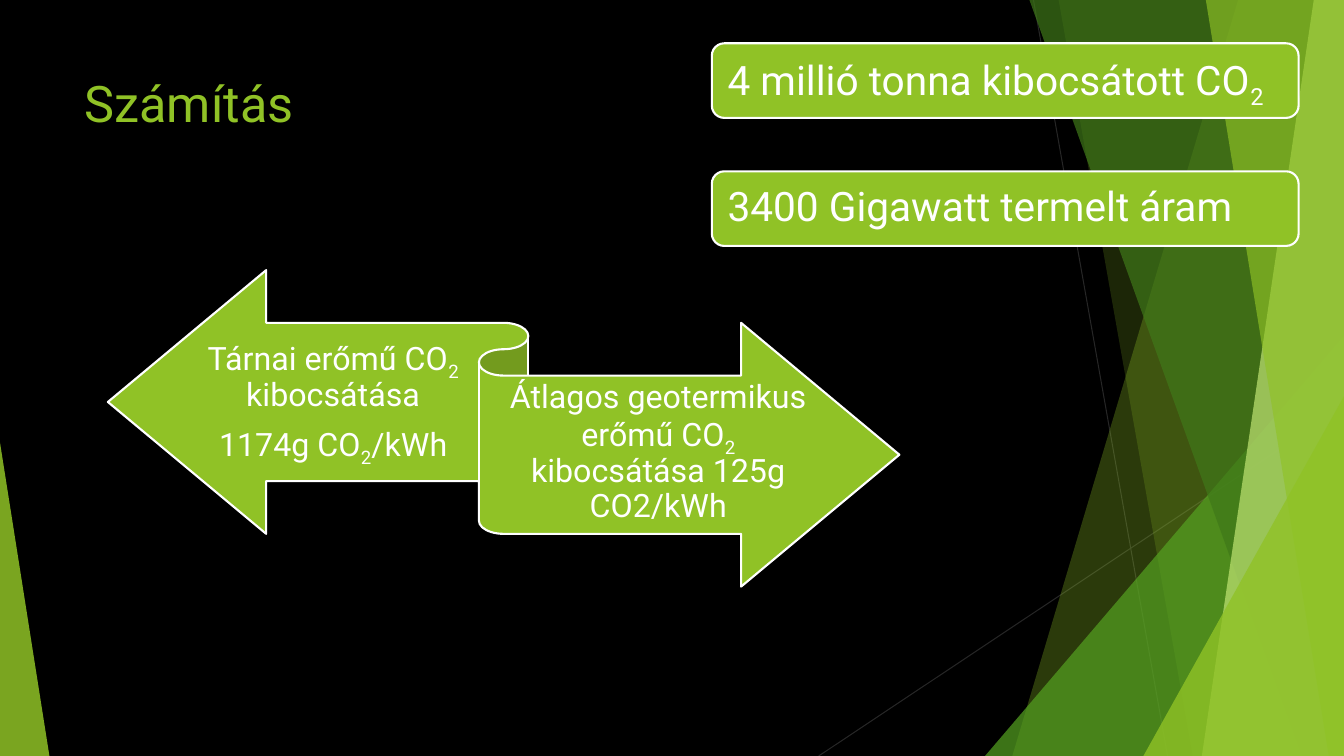
"""Build the calculation slide comparing power plant emissions."""
from lxml import etree
from pptx import Presentation
from pptx import util as u
from pptx.dml import color
from pptx.enum import shapes, text
from pptx.oxml import ns

PX = 9144
W, H = 1333, 750
C = {"bg": "000000", "green": "90C226", "mid": "54A021", "dark": "3F7819",
     "pale": "C0E474", "white": "FFFFFF", "thin": "262626"}
FONT = "Roboto"


def rgb(name):
    return color.RGBColor.from_string(C[name])


def box(*lengths):
    return [n * PX for n in lengths]


def set_all(obj, values):
    for name, value in values.items():
        setattr(obj, name, value)


def paint(sp, fill, alpha=100, line=None):
    sp.shadow.inherit = False
    sp.fill.solid()
    sp.fill.fore_color.rgb = rgb(fill)
    if alpha < 100:
        clr = sp.fill._xPr.find(".//" + ns.qn("a:srgbClr"))
        etree.SubElement(clr, ns.qn("a:alpha")).set("val", str(alpha * 1000))
    if line:
        sp.line.color.rgb = rgb(line)
        sp.line.width = u.Pt(1.5)
    else:
        sp.line.fill.background()


def add_line(s, x1, y1, x2, y2):
    cn = s.shapes.add_connector(shapes.MSO_CONNECTOR.STRAIGHT, *box(x1, y1, x2, y2))
    cn.line.color.rgb = rgb("thin")
    cn.line.width = u.Pt(0.75)
    etree.SubElement(cn._element.spPr, ns.qn("a:effectLst"))


def add_band(s, top_x, bottom_x, fill, alpha):
    fb = s.shapes.build_freeform(top_x, 0, scale=PX)
    fb.add_line_segments([(W, 0), (W, H), (bottom_x, H)], close=True)
    paint(fb.convert_to_shape(), fill, alpha)


def add_triangle(s, x, y, w, h, adj, fill, alpha):
    sp = s.shapes.add_shape(shapes.MSO_SHAPE.ISOSCELES_TRIANGLE, *box(x, y, w, h))
    sp.adjustments[0] = adj
    paint(sp, fill, alpha)


def write(sp, paragraphs, size, align, margins):
    """Fill a shape with paragraphs whose every second run is a subscript."""
    tf = sp.text_frame
    left, top, right, bottom = box(*margins)
    set_all(tf, {"word_wrap": True, "vertical_anchor": text.MSO_ANCHOR.MIDDLE,
                 "margin_left": left, "margin_top": top,
                 "margin_right": right, "margin_bottom": bottom})
    for i, runs in enumerate(paragraphs):
        p = tf.add_paragraph() if i else tf.paragraphs[0]
        set_all(p, {"alignment": align, "line_spacing": 0.9,
                    "space_after": u.Pt(round(size * 0.35))})
        for j, words in enumerate(runs):
            r = p.add_run()
            r.text = words
            set_all(r.font, {"name": FONT, "size": u.Pt(size)})
            r.font.color.rgb = rgb("white")
            if j % 2:
                r.font._element.set("baseline", "-25000")


def add_title(s, words):
    sp = s.shapes.title
    set_all(sp, dict(zip(("left", "top", "width", "height"), box(74, 67, 940, 144))))
    tf = sp.text_frame
    tf.text = words
    tf.vertical_anchor = text.MSO_ANCHOR.TOP
    p = tf.paragraphs[0]
    p.alignment = text.PP_ALIGN.LEFT
    set_all(p.runs[0].font, {"name": FONT, "size": u.Pt(36)})
    p.runs[0].font.color.rgb = rgb("green")


def add_fact(s, y, runs):
    sp = s.shapes.add_shape(shapes.MSO_SHAPE.ROUNDED_RECTANGLE, *box(706, y, 582, 74))
    paint(sp, "green", line="white")
    write(sp, [runs], 29, text.PP_ALIGN.LEFT, (12, 12, 12, 12))


def add_arrow_text(s, x, y, w, paragraphs):
    sp = s.shapes.add_textbox(*box(x, y, w, 154))
    write(sp, paragraphs, 23, text.PP_ALIGN.CENTER, (0, 9, 0, 10))


def add_decoration(s):
    add_line(s, 1025, 0, 1158, H)
    add_line(s, W, 403, 812, H)
    add_band(s, 1228, 1004, "green", 30)
    add_band(s, 1050, 1183, "green", 20)
    add_triangle(s, 977, 333, 356, 417, 1, "mid", 72)
    add_band(s, 1021, 1291, "dark", 70)
    add_band(s, 1303, 1192, "pale", 70)
    add_band(s, 1196, 1318, "green", 65)
    add_triangle(s, 1134, 393, 199, 357, 1, "green", 80)
    add_triangle(s, 0, 439, 49, 311, 0, "green", 85)


def main():
    prs = Presentation()
    prs.slide_width, prs.slide_height = box(W, H)
    s = prs.slides.add_slide(prs.slide_layouts[5])
    s.background.fill.solid()
    s.background.fill.fore_color.rgb = rgb("bg")
    add_decoration(s)
    add_title(s, "Számítás")
    ribbon = s.shapes.add_shape(shapes.MSO_SHAPE.LEFT_RIGHT_RIBBON, *box(107, 268, 785, 314))
    paint(ribbon, "green", line="white")
    add_arrow_text(s, 201, 322, 259, [
        ["Tárnai erőmű CO", "2", " kibocsátása"],
        ["1174g CO", "2", "/kWh"]])
    add_arrow_text(s, 500, 372, 306, [
        ["Átlagos geotermikus erőmű CO", "2", " kibocsátása 125g CO2/kWh"]])
    add_fact(s, 43, ["4 millió tonna kibocsátott CO", "2"])
    add_fact(s, 170, ["3400 Gigawatt termelt áram"])
    prs.save("out.pptx")


if __name__ == "__main__":
    main()
